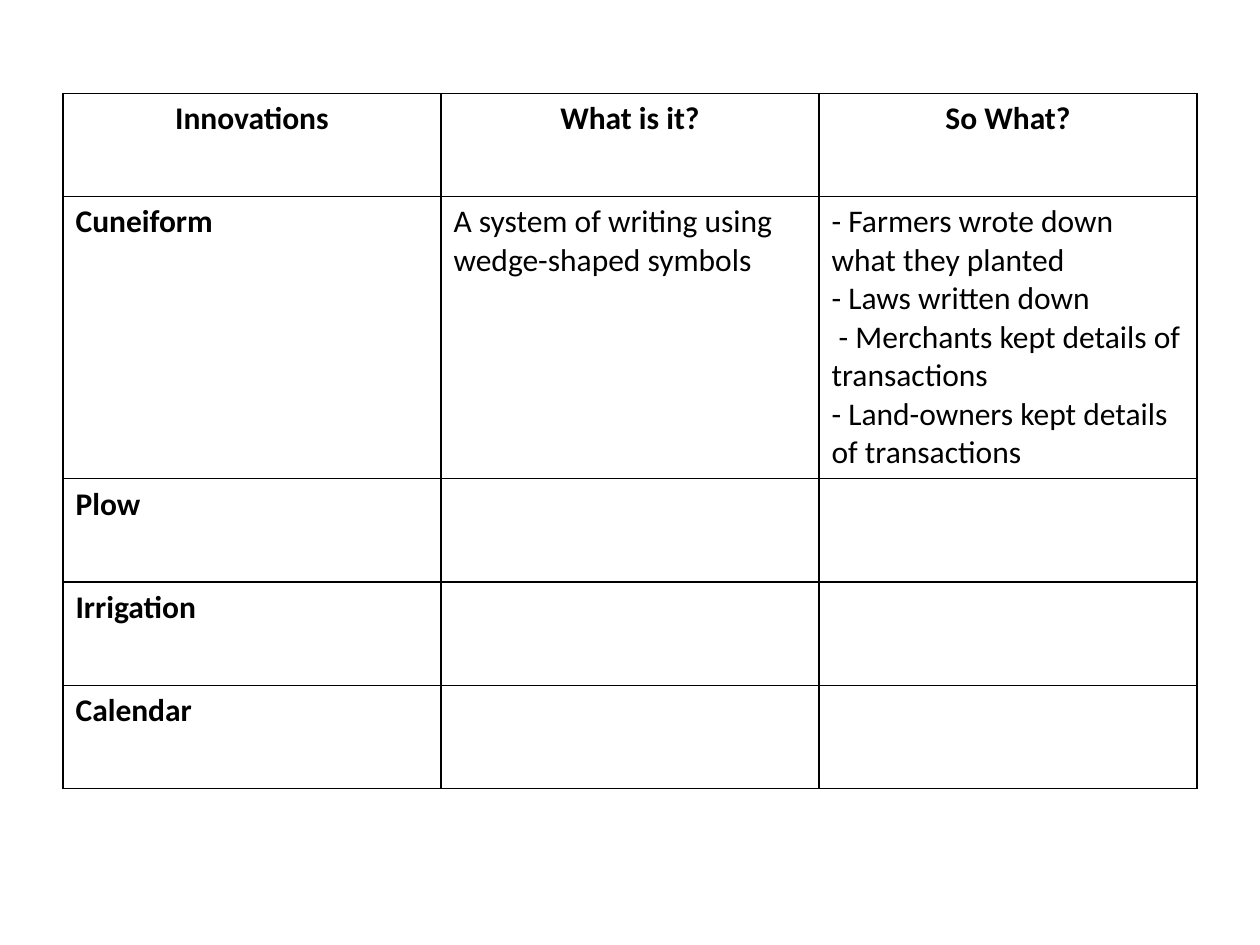
import lxml.etree
import pptx
import pptx.dml.color
import pptx.enum.text
import pptx.oxml.ns
import pptx.util

BLACK = "000000"
WHITE = "FFFFFF"
COLUMN_WIDTH = 3
ROW_HEIGHTS = [0.82, 2.24, 0.82, 0.82, 0.82]
INNOVATIONS = [
    ["Innovations", "What is it?", "So What?"],
    [
        "Cuneiform",
        "A system of writing using wedge-shaped symbols",
        "- Farmers wrote down what they planted\n"
        "- Laws written down\n"
        " - Merchants kept details of transactions\n"
        "- Land-owners kept details of transactions",
    ],
    ["Plow", "", ""],
    ["Irrigation", "", ""],
    ["Calendar", "", ""],
]


def color(hex_value):
    """Turn a hex string into a colour."""
    return pptx.dml.color.RGBColor.from_string(hex_value)


def fill_cell(cell, hex_value):
    """Give a cell a solid fill."""
    cell.fill.solid()
    cell.fill.fore_color.rgb = color(hex_value)


def border_cell(cell, hex_value, points):
    """Draw a solid line on all four sides of a cell."""
    qn = pptx.oxml.ns.qn
    properties = cell._tc.get_or_add_tcPr()
    for position, side in enumerate(("a:lnL", "a:lnR", "a:lnT", "a:lnB")):
        line = lxml.etree.Element(qn(side), w=str(pptx.util.Pt(points)))
        fill = lxml.etree.SubElement(line, qn("a:solidFill"))
        lxml.etree.SubElement(fill, qn("a:srgbClr"), val=hex_value)
        properties.insert(position, line)


def write_cell(cell, wording, bold, centred):
    """Write the wording of a cell, one paragraph a line."""
    cell.text = wording
    for paragraph in cell.text_frame.paragraphs:
        paragraph.font.name = "Calibri"
        paragraph.font.size = pptx.util.Pt(18)
        paragraph.font.bold = bold
        paragraph.font.color.rgb = color(BLACK)
        if centred:
            paragraph.alignment = pptx.enum.text.PP_ALIGN.CENTER


def add_innovations_table(slide):
    """Add the chart of innovations with its header row and label column."""
    inches = pptx.util.Inches
    column_count = len(INNOVATIONS[0])
    innovations = slide.shapes.add_table(
        len(INNOVATIONS), column_count, inches(0.5), inches(0.74),
        inches(COLUMN_WIDTH * column_count), inches(sum(ROW_HEIGHTS)),
    ).table
    innovations.first_row = False
    innovations.horz_banding = False
    for column in innovations.columns:
        column.width = inches(COLUMN_WIDTH)
    for row, height in zip(innovations.rows, ROW_HEIGHTS):
        row.height = inches(height)
    for row_index, entries in enumerate(INNOVATIONS):
        for column_index, wording in enumerate(entries):
            cell = innovations.cell(row_index, column_index)
            is_header = row_index == 0
            write_cell(cell, wording, is_header or column_index == 0, is_header)
            fill_cell(cell, WHITE)
            border_cell(cell, BLACK, 1)


def main():
    """Build the slide and save it."""
    presentation = pptx.Presentation()
    presentation.slide_width = pptx.util.Inches(10)
    presentation.slide_height = pptx.util.Inches(7.5)
    slide = presentation.slides.add_slide(presentation.slide_layouts[6])
    add_innovations_table(slide)
    presentation.save("out.pptx")


if __name__ == "__main__":
    main()
